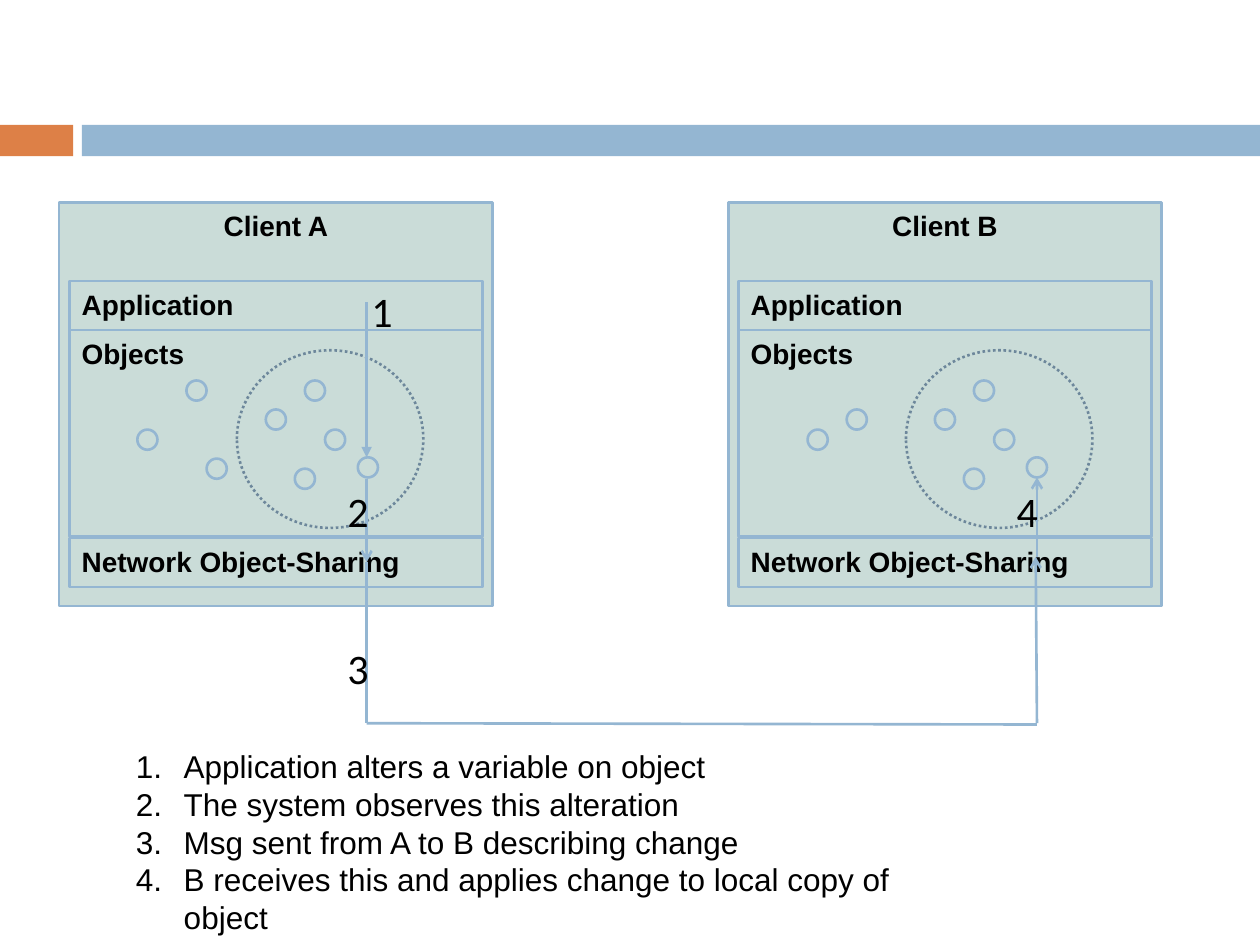
import pptx
import pptx.util
import pptx.dml.color
import pptx.enum.dml
import pptx.enum.shapes
import pptx.enum.text
import pptx.oxml
import pptx.oxml.ns

Inches = pptx.util.Inches
Shape = pptx.enum.shapes.MSO_SHAPE
Align = pptx.enum.text.PP_ALIGN

BLUE = "94B6D2"
ORANGE = "DD8047"
PALE = "CADCD8"
SLATE = "6D879B"
BLACK = "000000"

CLIENT_STEP = 5.31
OBJECT_SIZE = 0.16
SHARED_OBJECTS = [(2.11, 3.25), (2.34, 3.72), (2.58, 3.41), (2.42, 3.02), (2.84, 3.63)]
PRIVATE_OBJECTS_A = [(1.09, 3.41), (1.64, 3.64), (1.48, 3.02)]
PRIVATE_OBJECTS_B = [(1.1, 3.41), (1.41, 3.25)]
LAYERS = [("Objects", 2.62, 1.64), ("Application", 2.23, 0.39), ("Network Object-Sharing", 4.27, 0.39)]
STEPS = [
    "Application alters a variable on object",
    "The system observes this alteration",
    "Msg sent from A to B describing change",
    "B receives this and applies change to local copy of object",
]
STEP_MARKS = [("1", 2.85, 2.22), ("2", 2.66, 3.8), ("3", 2.66, 5.05), ("4", 7.97, 3.8)]
MESSAGE_ROUTE = [
    ((2.91, 2.4), (2.91, 3.63), "triangle"),
    ((2.91, 3.8), (2.91, 4.46), "arrow"),
    ((2.91, 4.46), (2.91, 5.74), None),
    ((2.91, 5.74), (8.23, 5.75), None),
    ((8.23, 5.74), (8.22, 4.42), "arrow"),
    ((8.23, 4.42), (8.23, 3.79), "arrow"),
]


def color(value):
    return pptx.dml.color.RGBColor.from_string(value)


def write(paragraph, text, size=16, font="Arial", bold=False, align=Align.LEFT):
    paragraph.alignment = align
    run = paragraph.add_run()
    run.text = text
    run.font.size = pptx.util.Pt(size)
    run.font.name = font
    run.font.bold = bold
    run.font.color.rgb = color(BLACK)


def add_figure(slide, kind, left, top, width, height, fill=PALE, line=BLUE, dash=None):
    figure = slide.shapes.add_shape(kind, Inches(left), Inches(top), Inches(width), Inches(height))
    figure.shadow.inherit = False
    if fill:
        figure.fill.solid()
        figure.fill.fore_color.rgb = color(fill)
    else:
        figure.fill.background()
    if line:
        figure.line.color.rgb = color(line)
        figure.line.width = pptx.util.Pt(1.5)
    else:
        figure.line.fill.background()
    if dash:
        figure.line.dash_style = dash
    return figure


def add_panel(slide, label, left, top, width, height, align=Align.LEFT):
    panel = add_figure(slide, Shape.RECTANGLE, left, top, width, height)
    panel.text_frame.vertical_anchor = pptx.enum.text.MSO_ANCHOR.TOP
    write(panel.text_frame.paragraphs[0], label, bold=True, align=align)


def add_client(slide, name, offset, private_objects):
    add_panel(slide, name, 0.47 + offset, 1.61, 3.44, 3.2, align=Align.CENTER)
    for label, top, height in LAYERS:
        add_panel(slide, label, 0.55 + offset, top, 3.28, height)
    for left, top in SHARED_OBJECTS + private_objects:
        add_figure(slide, Shape.OVAL, left + offset, top, OBJECT_SIZE, OBJECT_SIZE)
    add_figure(slide, Shape.OVAL, 1.88 + offset, 2.78, 1.48, 1.41, fill=None, line=SLATE,
               dash=pptx.enum.dml.MSO_LINE.ROUND_DOT)


def add_route(slide, start, end, arrowhead):
    route = slide.shapes.add_connector(
        pptx.enum.shapes.MSO_CONNECTOR.STRAIGHT, *map(Inches, start + end))
    route.line.color.rgb = color(BLUE)
    route.line.width = pptx.util.Pt(1.5)
    if arrowhead:
        tail = pptx.oxml.ns.qn("a:tailEnd")
        route.line._get_or_add_ln().append(route._element.makeelement(tail, {"type": arrowhead}))
    effects = pptx.oxml.ns.qn("a:effectLst")
    route._element.spPr.append(route._element.makeelement(effects, {}))


def add_text_frame(slide, left, top, width, height):
    box = slide.shapes.add_textbox(Inches(left), Inches(top), Inches(width), Inches(height))
    box.text_frame.word_wrap = True
    return box.text_frame


def add_steps(slide):
    frame = add_text_frame(slide, 0.98, 5.88, 6.91, 1.31)
    for index, step in enumerate(STEPS):
        paragraph = frame.add_paragraph() if index else frame.paragraphs[0]
        write(paragraph, step, size=18)
        properties = paragraph._p.get_or_add_pPr()
        properties.set("marL", str(Inches(0.38)))
        properties.set("indent", str(Inches(-0.38)))
        numbering = pptx.oxml.ns.qn("a:buAutoNum")
        properties.append(properties.makeelement(numbering, {"type": "arabicPeriod"}))


def main():
    deck = pptx.Presentation()
    deck.slide_width = Inches(10)
    deck.slide_height = Inches(7.5)
    slide = deck.slides.add_slide(deck.slide_layouts[6])

    add_figure(slide, Shape.RECTANGLE, 0, 0.99, 0.58, 0.25, fill=ORANGE, line=None)
    add_figure(slide, Shape.RECTANGLE, 0.65, 0.99, 9.35, 0.25, fill=BLUE, line=None)
    add_client(slide, "Client A", 0, PRIVATE_OBJECTS_A)
    add_client(slide, "Client B", CLIENT_STEP, PRIVATE_OBJECTS_B)
    for start, end, arrowhead in MESSAGE_ROUTE:
        add_route(slide, start, end, arrowhead)
    for number, left, top in STEP_MARKS:
        mark = add_text_frame(slide, left, top, 0.33, 0.91)
        write(mark.paragraphs[0], number, size=24, font="Calibri")
    add_steps(slide)
    deck.save("out.pptx")


if __name__ == "__main__":
    main()
